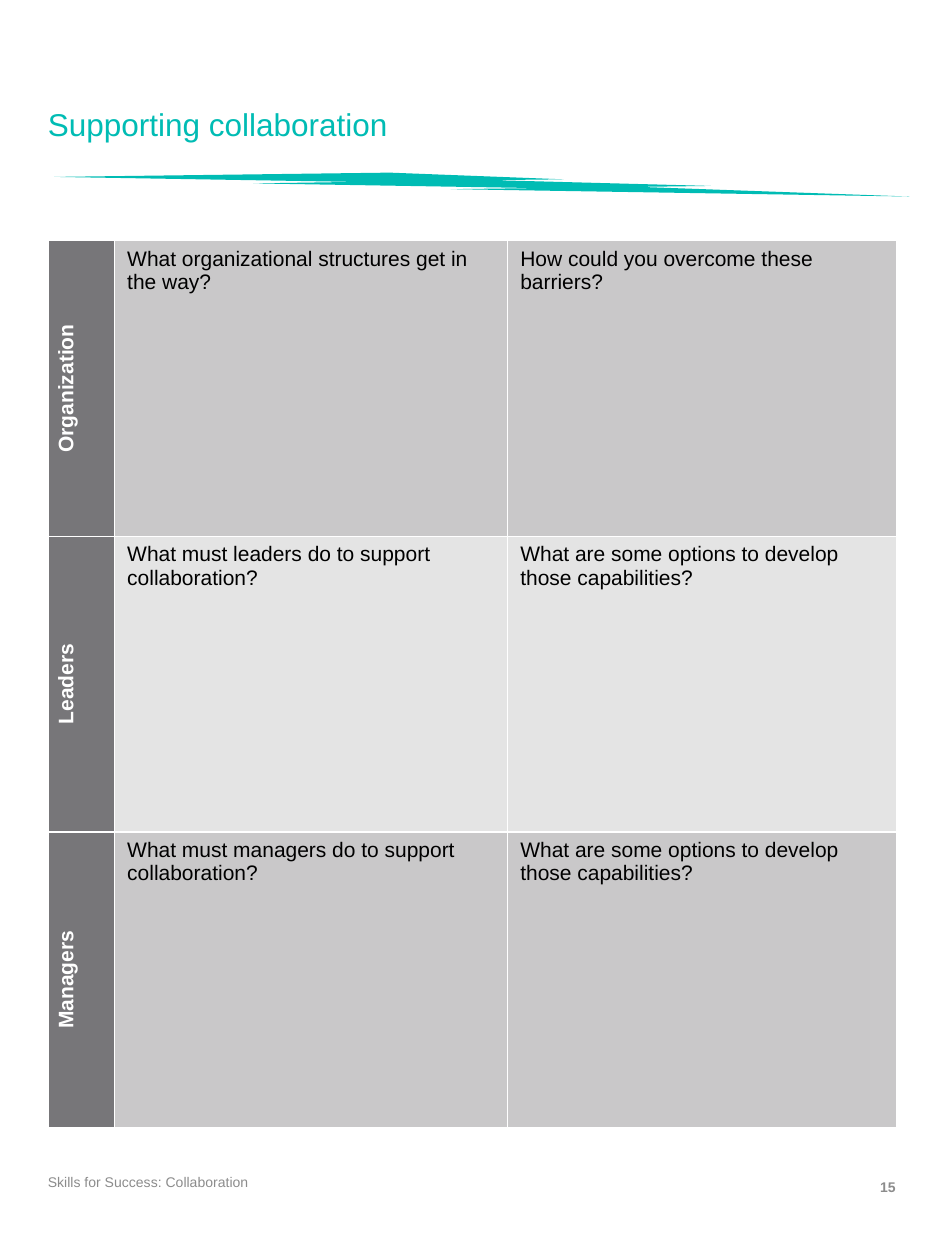
import dataclasses

import pptx
import pptx.dml.color
import pptx.enum.shapes
import pptx.enum.text
import pptx.oxml
import pptx.oxml.ns
import pptx.util
from pptx.util import Inches

ALIGN = pptx.enum.text.PP_ALIGN
ANCHOR = pptx.enum.text.MSO_ANCHOR


@dataclasses.dataclass(frozen=True)
class Theme:
    font: str = "Arial"
    accent: str = "00BCB4"
    header: str = "777679"
    bands: tuple = ("C9C8C9", "E4E4E4")
    white: str = "FFFFFF"
    black: str = "000000"
    muted: str = "8C8C8C"
    title_size: int = 18
    body_size: int = 12
    footer_size: int = 8


THEME = Theme()

ROWS = [
    ("Organization",
     "What organizational structures get in the way?",
     "How could you overcome these barriers?"),
    ("Leaders",
     "What must leaders do to support collaboration?",
     "What are some options to develop those capabilities?"),
    ("Managers",
     "What must managers do to support collaboration?",
     "What are some options to develop those capabilities?"),
]
COLUMN_WIDTHS = (0.53, 3.12, 3.09)
ROW_HEIGHT = 2.347
LEFT, WIDTH = 0.38, 6.74


def rgb(color):
    return pptx.dml.color.RGBColor.from_string(color)


def write(frame, text, size=THEME.body_size, color=THEME.black, bold=False,
          align=ALIGN.LEFT, line_spacing=None):
    para = frame.paragraphs[0]
    para.alignment = align
    if line_spacing:
        para.line_spacing = line_spacing
    span = para.add_run()
    span.text = text
    span.font.name = THEME.font
    span.font.size = pptx.util.Pt(size)
    span.font.bold = bold
    span.font.color.rgb = rgb(color)


def set_frame(frame, vertical_inset=0):
    frame.word_wrap = True
    frame.auto_size = pptx.enum.text.MSO_AUTO_SIZE.NONE
    frame.vertical_anchor = ANCHOR.MIDDLE
    frame.margin_left = frame.margin_right = 0
    frame.margin_top = frame.margin_bottom = Inches(vertical_inset)


def add_bolt(page):
    bolt = page.shapes.add_shape(
        pptx.enum.shapes.MSO_SHAPE.LIGHTNING_BOLT,
        Inches(0.43), Inches(1.37), Inches(6.79), Inches(0.19))
    bolt.shadow.inherit = False
    bolt.fill.solid()
    bolt.fill.fore_color.rgb = rgb(THEME.accent)
    bolt.line.fill.background()


def set_title(page, text):
    title = page.shapes.title
    title.left, title.top = Inches(LEFT), Inches(0.53)
    title.width, title.height = Inches(WIDTH), Inches(0.94)
    set_frame(title.text_frame)
    write(title.text_frame, text, size=THEME.title_size, color=THEME.accent,
          line_spacing=0.9)


def add_footer(page, text, left, top, width, height, **style):
    box = page.shapes.add_textbox(
        Inches(left), Inches(top), Inches(width), Inches(height))
    set_frame(box.text_frame, vertical_inset=0.05)
    write(box.text_frame, text, size=THEME.footer_size, color=THEME.muted, **style)


def style_cell(cell, fill):
    # Borders come before the fill in the cell properties
    properties = cell._tc.get_or_add_tcPr()
    for side in "LRTB":
        properties.append(pptx.oxml.parse_xml(
            f'<a:ln{side} {pptx.oxml.ns.nsdecls("a")} w="{pptx.util.Pt(1)}">'
            f'<a:solidFill><a:srgbClr val="{THEME.white}"/></a:solidFill>'
            f'</a:ln{side}>'))
    cell.fill.solid()
    cell.fill.fore_color.rgb = rgb(fill)


def add_question_table(page):
    table = page.shapes.add_table(
        len(ROWS), len(COLUMN_WIDTHS), Inches(LEFT), Inches(1.91),
        Inches(WIDTH), Inches(ROW_HEIGHT * len(ROWS))).table
    table.first_row = table.horz_banding = False
    for column, width in zip(table.columns, COLUMN_WIDTHS):
        column.width = Inches(width)
    for index, (row, (label, *questions)) in enumerate(zip(table.rows, ROWS)):
        row.height = Inches(ROW_HEIGHT)
        header, *answers = row.cells
        style_cell(header, THEME.header)
        header.vertical_anchor = ANCHOR.MIDDLE
        header._tc.get_or_add_tcPr().set("vert", "vert270")
        write(header.text_frame, label, color=THEME.white, bold=True,
              align=ALIGN.CENTER)
        for cell, question in zip(answers, questions):
            style_cell(cell, THEME.bands[index % 2])
            write(cell.text_frame, question)


def main():
    deck = pptx.Presentation()
    deck.slide_width, deck.slide_height = Inches(7.5), Inches(10)
    page = deck.slides.add_slide(deck.slide_layouts.get_by_name("Title Only"))

    # Heading
    add_bolt(page)
    set_title(page, "Supporting collaboration")

    # Worksheet
    add_question_table(page)

    # Footer
    add_footer(page, "Skills for Success: Collaboration", LEFT, 9.2, 2.53, 0.36)
    add_footer(page, "15", 6.33, 9.27, 0.78, 0.3, bold=True, align=ALIGN.RIGHT)

    deck.save("out.pptx")


if __name__ == "__main__":
    main()
